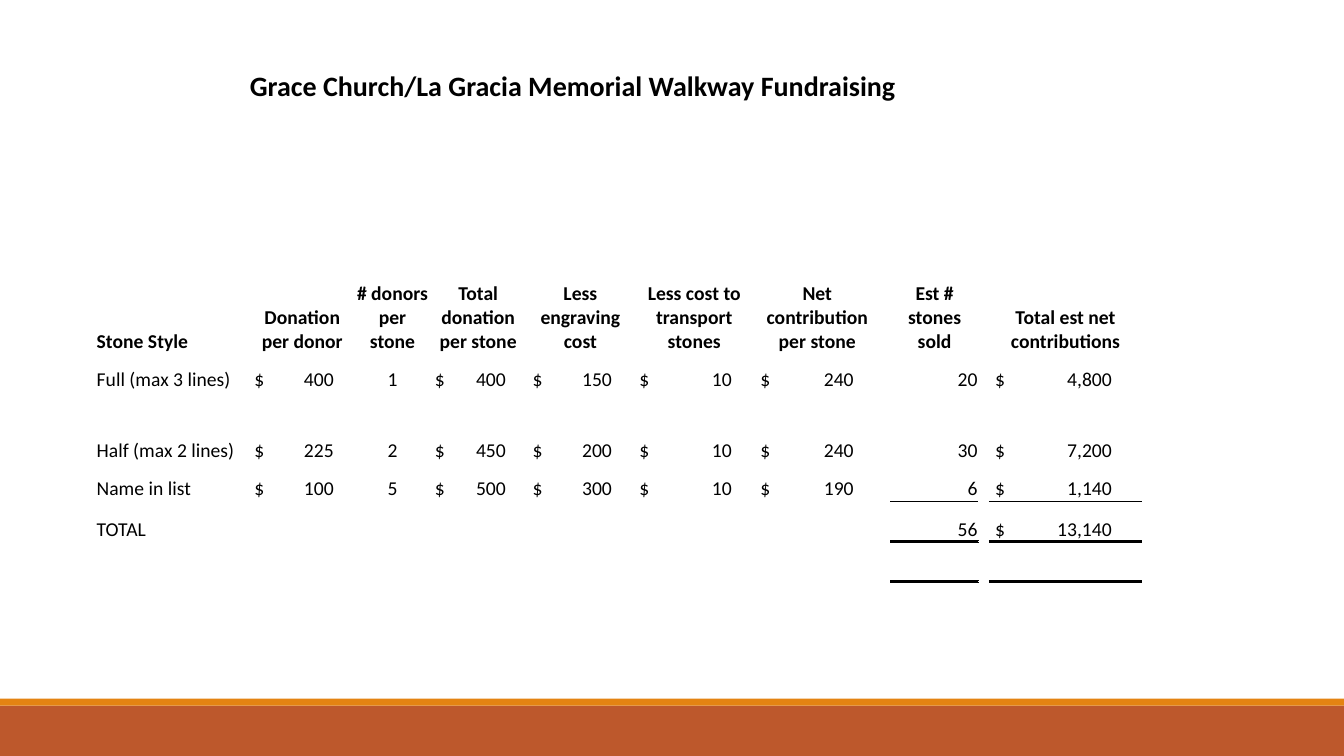
"""Build the memorial walkway fundraising slide."""
from dataclasses import dataclass
from typing import Optional

from lxml.etree import SubElement
from pptx import Presentation
from pptx.dml.color import RGBColor
from pptx.enum.shapes import MSO_SHAPE as Shape
from pptx.enum.text import MSO_ANCHOR as Anchor, PP_ALIGN as Align
from pptx.oxml.ns import qn
from pptx.util import Pt

BLACK = RGBColor(0x00, 0x00, 0x00)
RUST = RGBColor(0xBD, 0x58, 0x2C)
AMBER = RGBColor(0xE4, 0x83, 0x12)
FONT = "Calibri"
HEADS, TOTAL = 4, 8
INDENT = 4


@dataclass
class Bar:
    top: float
    height: float
    color: RGBColor


@dataclass
class Column:
    width: float
    head: str = ""
    align: Align = Align.LEFT
    stop: Optional[float] = None
    ruled: bool = False


BARS = [Bar(504, 36, RUST), Bar(499, 5, AMBER)]
COLUMNS = [
    Column(109.4, "Stone Style"),
    Column(76.3, "Donation per donor", stop=56.7),
    Column(52.6, "# donors per stone", Align.CENTER),
    Column(69.8, "Total donation per stone", stop=50.7),
    Column(76.3, "Less engraving cost", stop=56.7),
    Column(86.4, "Less cost to transport stones", stop=66),
    Column(89.3, "Net contribution per stone", stop=66.7),
    Column(7.9),
    Column(62.6, "Est # stones sold", Align.RIGHT, ruled=True),
    Column(7.9),
    Column(108.7, "Total est net contributions", stop=83.5, ruled=True),
]
HEIGHTS = [38.2, 27.4, 20.2, 21.6, 109.4, 27.4, 50.4, 27.4, 28.8, 28.8, 27.4]
STONES = [
    ["Full (max 3 lines)", "400", "1", "400", "150", "10", "240", "", "20", "", "4,800"],
    ["Half (max 2 lines)", "225", "2", "450", "200", "10", "240", "", "30", "", "7,200"],
    ["Name in list", "100", "5", "500", "300", "10", "190", "", "6", "", "1,140"],
    ["TOTAL", "", "", "", "", "", "", "", "56", "", "13,140"],
]
RULES = {
    TOTAL - 1: [("lnB", 0.5)],
    TOTAL: [("lnT", 0.5), ("lnB", 2)],
    TOTAL + 1: [("lnT", 2)],
}


def add_bar(slide, bar: Bar) -> None:
    """Draw one full-width bar."""
    shape = slide.shapes.add_shape(Shape.RECTANGLE, 0, Pt(bar.top), Pt(960), Pt(bar.height))
    shape.shadow.inherit = False
    shape.fill.solid()
    shape.fill.fore_color.rgb = bar.color
    shape.line.fill.background()


def add_rule(cell, side: str, width: float) -> None:
    """Rule one side of a cell."""
    line = SubElement(cell._tc.get_or_add_tcPr(), qn(f"a:{side}"), w=str(Pt(width)))
    fill = SubElement(line, qn("a:solidFill"))
    SubElement(fill, qn("a:srgbClr"), val=str(BLACK))


def write(cell, text: str, *, size: float = 14, bold: bool = False,
          align: Align = Align.LEFT, stop: Optional[float] = None) -> None:
    """Put formatted text in a cell, with a right tab if a stop is given."""
    cell.vertical_anchor = Anchor.BOTTOM
    cell.margin_left = Pt(INDENT if stop else 0.7)
    cell.margin_right = cell.margin_top = Pt(0.7)
    cell.margin_bottom = 0
    para = cell.text_frame.paragraphs[0]
    para.alignment = align
    if not text:
        SubElement(para._p, qn("a:endParaRPr"), sz=str(int(size * 100)))
        return
    if stop:
        tabs = SubElement(para._p.get_or_add_pPr(), qn("a:tabLst"))
        SubElement(tabs, qn("a:tab"), pos=str(Pt(stop)), algn="r")
    run = para.add_run()
    run.text = text
    font = run.font
    font.name, font.size, font.bold = FONT, Pt(size), bold
    font.color.rgb = BLACK


def fill_cell(cell, row: int, col: int) -> None:
    """Rule, clear and write one cell of the table."""
    column = COLUMNS[col]
    if column.ruled:
        for side, width in RULES.get(row, []):
            add_rule(cell, side, width)
    cell.fill.background()
    if (row, col) == (0, 1):
        write(cell, "Grace Church/La Gracia Memorial Walkway Fundraising", size=20, bold=True)
    elif row == HEADS:
        write(cell, column.head, bold=True, align=Align.CENTER if col else Align.LEFT)
    elif HEADS < row <= TOTAL:
        value = STONES[row - HEADS - 1][col]
        if value and column.stop:
            write(cell, f"$\t{value}", stop=column.stop)
        else:
            write(cell, value, align=column.align)
    else:
        write(cell, "")


def add_grid(slide) -> None:
    """Add the table of stone styles."""
    width = sum(column.width for column in COLUMNS)
    frame = slide.shapes.add_table(len(HEIGHTS), len(COLUMNS), Pt(68.4), Pt(36),
                                   Pt(width), Pt(sum(HEIGHTS)))
    table = frame.table
    table.first_row = table.horz_banding = False
    for col, column in enumerate(COLUMNS):
        table.columns[col].width = Pt(column.width)
    for row, height in enumerate(HEIGHTS):
        table.rows[row].height = Pt(height)
        for col in range(len(COLUMNS)):
            fill_cell(table.cell(row, col), row, col)
    table.cell(0, 1).merge(table.cell(0, len(COLUMNS) - 1))


def main() -> None:
    """Build and save the deck."""
    deck = Presentation()
    deck.slide_width, deck.slide_height = Pt(960), Pt(540)
    slide = deck.slides.add_slide(deck.slide_layouts[6])
    for bar in BARS:
        add_bar(slide, bar)
    add_grid(slide)
    deck.save("out.pptx")


if __name__ == "__main__":
    main()
